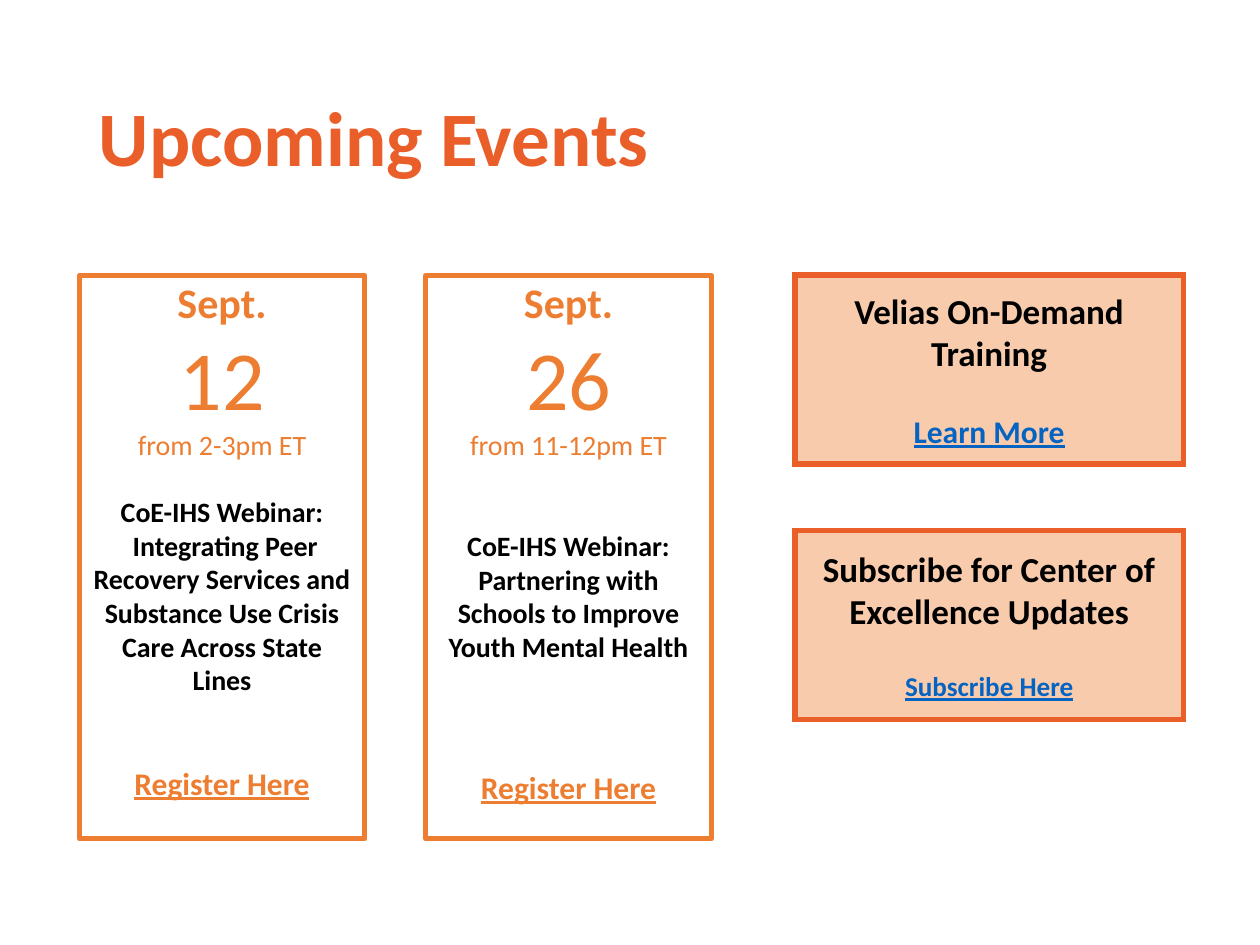
from lxml.etree import SubElement
from pptx import Presentation
from pptx.dml.color import RGBColor
from pptx.enum.shapes import MSO_SHAPE
from pptx.enum.text import MSO_ANCHOR, PP_ALIGN
from pptx.oxml.ns import qn
from pptx.util import Pt

ORANGE = "ED7D31"
RED_ORANGE = "EA5E29"
PEACH = "F8CBAD"
BLACK = "000000"
LINK_BLUE = "0563C1"


def color(value):
    """Turn a hex string into a colour."""
    return RGBColor.from_string(value)


def set_values(target, values):
    """Set attributes from a dict of format values."""
    for name, value in values.items():
        setattr(target, name, value)


def write_paragraphs(frame, rows, alignment):
    """Write rows of text, size, colour, space before and font values."""
    for index, (text, size, hex_color, space, values) in enumerate(rows):
        paragraph = frame.paragraphs[0] if index == 0 else frame.add_paragraph()
        set_values(paragraph, {"alignment": alignment, "space_before": Pt(space)})
        run = paragraph.add_run()
        run.text = text
        set_values(run.font, {"name": "Calibri", "size": Pt(size), **values})
        run.font.color.rgb = color(hex_color)


def add_box(slide, box, line_color, anchor):
    """Add an unfilled, outlined rectangle ready for text."""
    shape = slide.shapes.add_shape(MSO_SHAPE.RECTANGLE, *map(Pt, box))
    shape.shadow.inherit = False
    shape.fill.background()
    shape.line.color.rgb = color(line_color)
    shape.line.width = Pt(3)
    set_values(shape.text_frame, {"word_wrap": True, "vertical_anchor": anchor})
    return shape


def add_title(slide, box, text):
    """Add the slide title."""
    frame = slide.shapes.add_textbox(*map(Pt, box)).text_frame
    set_values(frame, {"word_wrap": True, "vertical_anchor": MSO_ANCHOR.MIDDLE})
    write_paragraphs(frame, [(text, 44, RED_ORANGE, 0, {"bold": True})], PP_ALIGN.LEFT)
    frame.paragraphs[0].line_spacing = 0.9


def add_event_card(slide, box, day, hours, topics, topic_space, link_space):
    """Add a dated event card with its topic and registration line."""
    frame = add_box(slide, box, ORANGE, MSO_ANCHOR.TOP).text_frame
    frame.margin_top = Pt(0.5)
    rows = [
        ("Sept.", 24, ORANGE, 0, {"bold": True}),
        (day, 48, ORANGE, 0, {}),
        (hours, 16, ORANGE, 0, {}),
    ]
    for index, topic in enumerate(topics):
        space = topic_space if index == 0 else 0
        rows.append((topic, 16, BLACK, space, {"bold": True}))
    link_values = {"bold": True, "underline": True}
    rows.append(("Register Here", 18, ORANGE, link_space, link_values))
    write_paragraphs(frame, rows, PP_ALIGN.CENTER)


def add_link_panel(slide, box, heading, link, link_size):
    """Add a filled panel with a heading above a link."""
    shape = add_box(slide, box, RED_ORANGE, MSO_ANCHOR.MIDDLE)
    shape.fill.solid()
    shape.fill.fore_color.rgb = color(PEACH)
    outline = shape._element.spPr.find(qn("a:ln"))
    SubElement(outline, qn("a:miter"), lim="800000")
    rows = [
        (heading, 20, BLACK, 0, {"bold": True}),
        (link, link_size, LINK_BLUE, 21.6, {"bold": True, "underline": True}),
    ]
    write_paragraphs(shape.text_frame, rows, PP_ALIGN.CENTER)


def main():
    """Build the upcoming events slide."""
    presentation = Presentation()
    set_values(presentation, {"slide_width": Pt(720), "slide_height": Pt(540)})
    slide = presentation.slides.add_slide(presentation.slide_layouts[6])
    add_title(slide, (49.5, 28.75, 621, 104.4), "Upcoming Events")

    events = [
        ("12", "from 2-3pm ET", [
            "CoE-IHS Webinar:",
            " Integrating Peer Recovery Services and Substance Use Crisis Care Across State Lines",
        ], 19.2, 38.4),
        ("26", "from 11-12pm ET", [
            "CoE-IHS Webinar: Partnering with Schools to Improve Youth Mental Health",
        ], 38.4, 60),
    ]
    for index, event in enumerate(events):
        add_event_card(slide, (45.3 + 198 * index, 157.5, 163.2, 321.8), *event)

    panels = [
        ("Velias On-Demand Training", "Learn More", 18),
        ("Subscribe for Center of Excellence Updates", "Subscribe Here", 15.5),
    ]
    for index, panel in enumerate(panels):
        add_link_panel(slide, (454.3, 157.2 + 146 * index, 221.8, 108), *panel)

    presentation.save("out.pptx")


if __name__ == "__main__":
    main()
